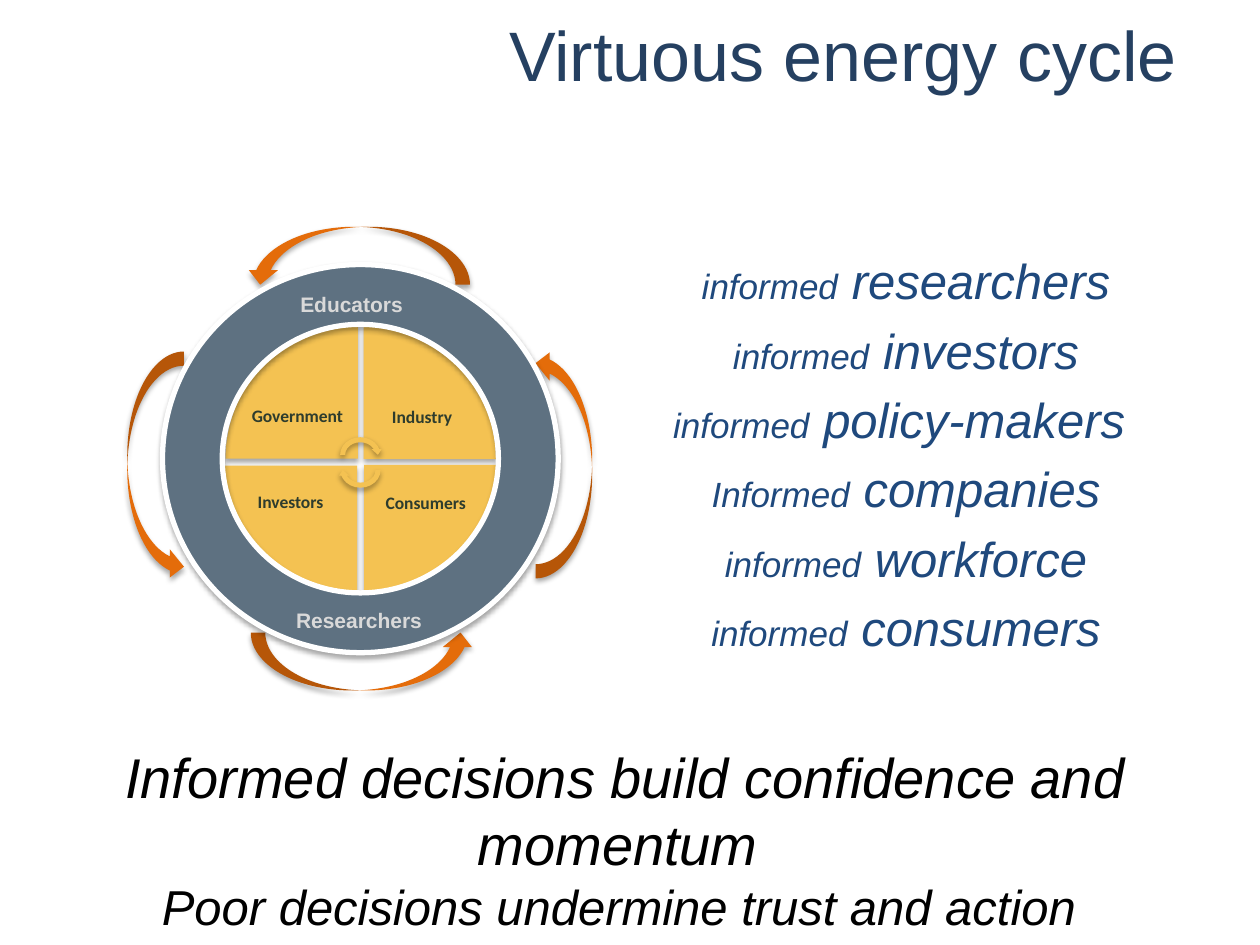
from pptx import Presentation
from pptx.dml.color import RGBColor
from pptx.enum.shapes import MSO_SHAPE
from pptx.enum.text import MSO_ANCHOR, PP_ALIGN
from pptx.oxml import parse_xml
from pptx.oxml.ns import nsdecls
from pptx.util import Inches, Pt

DARK, PALE, BLUE = "2E3C2D", "D9D9D9", "1F497D"
ORANGE, GOLD, SLATE = "E46C0A", "F4C252", "5E7181"


def hue(code):
    return RGBColor.from_string(code)


prs = Presentation()
prs.slide_width, prs.slide_height = Inches(10), Inches(7.5)
slide = prs.slides.add_slide(prs.slide_layouts[5])

# Title
title = slide.shapes.title
title.left, title.top = Inches(3.94), Inches(0.01)
title.width, title.height = Inches(6.06), Inches(0.83)
title.text = "Virtuous energy cycle"
title.text_frame.vertical_anchor = MSO_ANCHOR.MIDDLE
para = title.text_frame.paragraphs[0]
para.alignment = PP_ALIGN.LEFT
para.font.name, para.font.size = "Arial", Pt(40)
para.font.color.rgb = hue("254061")

# Wheel: outer arrows, quadrants, inner arrows, ring
arrow, wedge = MSO_SHAPE.CURVED_RIGHT_ARROW, MSO_SHAPE.PIE_WEDGE
turn = MSO_SHAPE.CIRCULAR_ARROW
parts = [
    (arrow, 1.01, 2.79, 0.45, 1.82, 0, ORANGE),
    (arrow, 2.65, 4.36, 0.46, 1.78, 270, ORANGE),
    (arrow, 2.61, 1.14, 0.46, 1.78, 90, ORANGE),
    (arrow, 4.25, 2.77, 0.45, 1.82, 180, ORANGE),
    (wedge, 1.79, 2.58, 1.05, 1.06, 0, GOLD),
    (wedge, 2.88, 2.59, 1.06, 1.05, 90, GOLD),
    (wedge, 2.89, 3.69, 1.05, 1.06, 180, GOLD),
    (wedge, 1.78, 3.7, 1.06, 1.05, 270, GOLD),
    (turn, 2.68, 3.45, 0.36, 0.32, 0, GOLD),
    (turn, 2.68, 3.57, 0.36, 0.32, 180, GOLD),
    (MSO_SHAPE.DONUT, 1.29, 2.1, 3.14, 3.08, 0, SLATE),
]
for kind, left, top, width, height, angle, fill in parts:
    part = slide.shapes.add_shape(kind, Inches(left), Inches(top),
                                  Inches(width), Inches(height))
    part.rotation = angle
    part.fill.solid()
    part.fill.fore_color.rgb = hue(fill)
    if kind == MSO_SHAPE.DONUT:
        part.adjustments[0] = 0.154
        part.line.color.rgb = hue("FFFFFF")
        part.line.width = Pt(3)
    else:
        part.line.fill.background()
    # Soft shadow straight below
    part._element.spPr.append(parse_xml(
        f'<a:effectLst {nsdecls("a")}><a:outerShdw blurRad="{Pt(3.1)}" '
        f'dist="{Pt(1.8)}" dir="5400000" rotWithShape="0">'
        '<a:srgbClr val="000000"><a:alpha val="35000"/></a:srgbClr>'
        '</a:outerShdw></a:effectLst>'))


def add_text(box, lines, face, color, bold=False, italic=False, after=0,
             inset=(0.1, 0.05, 0.1, 0.05), anchor=MSO_ANCHOR.TOP,
             align=PP_ALIGN.CENTER, pitch=1.0):
    """Each line is a list of (text, size) runs."""
    frame = slide.shapes.add_textbox(*map(Inches, box)).text_frame
    frame.word_wrap = True
    frame.vertical_anchor = anchor
    (frame.margin_left, frame.margin_top,
     frame.margin_right, frame.margin_bottom) = map(Inches, inset)
    for i, line in enumerate(lines):
        para = frame.add_paragraph() if i else frame.paragraphs[0]
        para.alignment = align
        para.line_spacing = pitch
        para.space_after = Pt(after)
        font = para.font
        font.name, font.bold, font.italic = face, bold, italic
        font.color.rgb = hue(color)
        for text, size in line:
            run = para.add_run()
            run.text = text
            run.font.size = Pt(size)


# Quadrant labels
even, flush = (0.14,) * 4, (0, 0.14, 0.14, 0.14)
mid, low = MSO_ANCHOR.MIDDLE, MSO_ANCHOR.BOTTOM
center, start = PP_ALIGN.CENTER, PP_ALIGN.LEFT
labels = [
    ((2.96, 3.08, 0.81, 0.47), [("Industry ", 10)], even, mid, center, 0.9),
    ((2.92, 3.83, 0.98, 0.34), [("Consumers", 10)], even, mid, start, 0.9),
    ((1.97, 3.79, 0.85, 0.38), [("Investors", 10), (" ", 13)], flush, mid,
     center, 0.9),
    ((1.93, 3.2, 0.86, 0.27), [("Government", 10)], (0, 0.04, 0, 0.09), low,
     center, 1.0),
]
for box, line, inset, anchor, align, pitch in labels:
    add_text(box, [line], "Calibri", DARK, bold=True, inset=inset,
             anchor=anchor, align=align, pitch=pitch)

# Ring labels
for box, name in [((2.2, 4.69, 1.37, 0.4), "Researchers"),
                  ((2.23, 2.18, 1.19, 0.4), "Educators")]:
    add_text(box, [[(name, 12), (" ", 18)]], "Arial", PALE, bold=True)

# Informed groups
groups = [("informed", " researchers"), ("informed", " investors"),
          ("informed", " policy-makers "), ("Informed", " companies"),
          ("informed", " workforce"), ("informed", " consumers")]
add_text((4.89, 1.94, 4.6, 3.35),
         [[(word, 20), (group, 28)] for word, group in groups],
         "Arial", BLUE, italic=True, after=6)

# Closing message
add_text((0.45, 5.84, 9.03, 1.11),
         [[("Informed decisions build confidence and momentum ", 32)],
          [("Poor decisions undermine trust and action ", 28)]],
         "Arial", "000000", italic=True)

prs.save("out.pptx")
